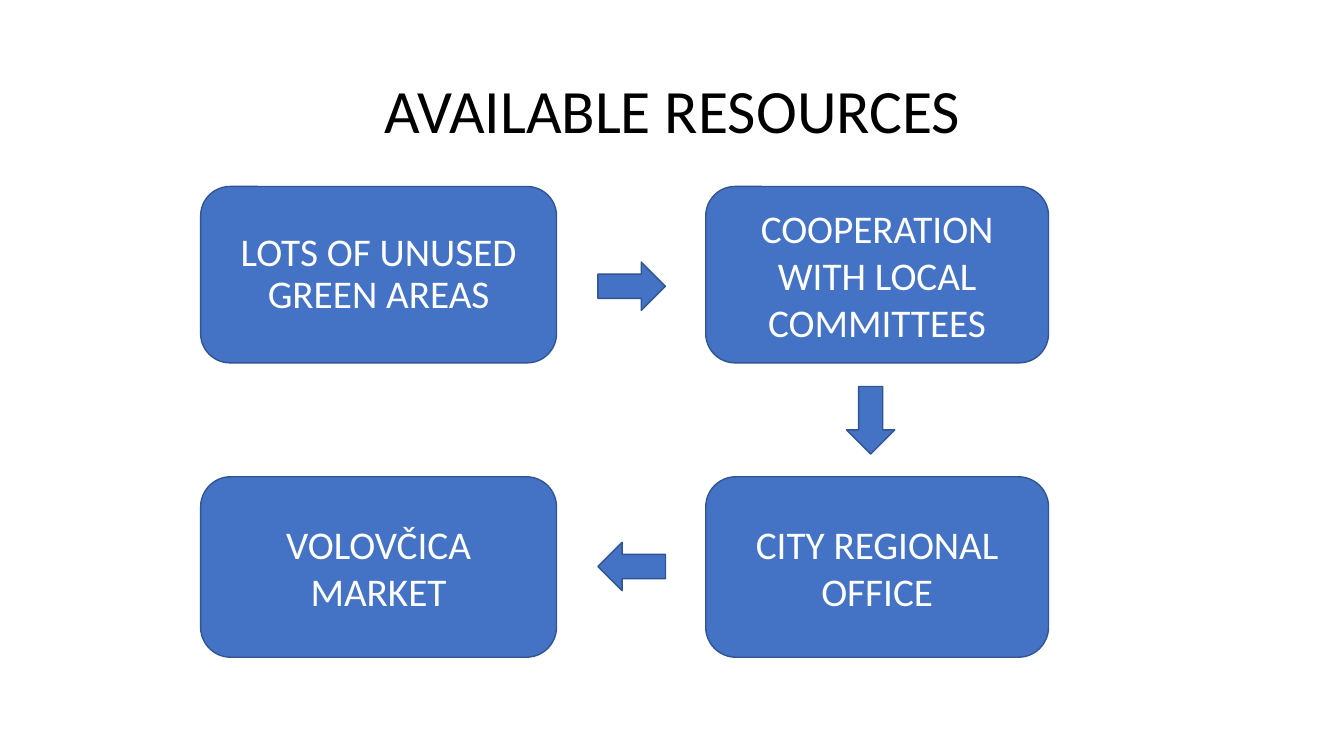
import pptx
import pptx.util
import pptx.dml.color
import pptx.enum.shapes
import pptx.enum.text

Inches = pptx.util.Inches
Pt = pptx.util.Pt
SHAPES = pptx.enum.shapes.MSO_SHAPE


def color(hex_string):
    return pptx.dml.color.RGBColor.from_string(hex_string)


def write(shape, text, size, text_color, line_spacing):
    frame = shape.text_frame
    frame.word_wrap = True
    frame.vertical_anchor = pptx.enum.text.MSO_ANCHOR.MIDDLE
    paragraph = frame.paragraphs[0]
    paragraph.text = text
    paragraph.alignment = pptx.enum.text.PP_ALIGN.CENTER
    paragraph.line_spacing = line_spacing
    paragraph.font.name = "Calibri"
    paragraph.font.size = Pt(size)
    paragraph.font.color.rgb = color(text_color)


presentation = pptx.Presentation()
presentation.slide_width = Inches(13.33)
presentation.slide_height = Inches(7.5)
slide = presentation.slides.add_slide(presentation.slide_layouts[6])

# Title
title = slide.shapes.add_textbox(Inches(0.92), Inches(0.4), Inches(11.5), Inches(1.45))
write(title, "AVAILABLE RESOURCES", 44, "000000", 0.9)

# Grid of boxes: (start, extent) of each column and row
columns = [(1.99, 3.53), (7, 3.4)]
rows = [(1.85, 1.75), (4.73, 1.79)]
resources = [
    ("LOTS OF UNUSED GREEN AREAS", 0, 0, 0.9),
    ("COOPERATION WITH LOCAL COMMITTEES", 1, 0, 1),
    ("VOLOVČICA MARKET", 0, 1, 1),
    ("CITY REGIONAL OFFICE", 1, 1, 1),
]
flow_shapes = []
for text, column, row, line_spacing in resources:
    left, width = columns[column]
    top, height = rows[row]
    box = slide.shapes.add_shape(SHAPES.ROUNDED_RECTANGLE, Inches(left), Inches(top),
                                 Inches(width), Inches(height))
    write(box, text, 28, "FFFFFF", line_spacing)
    flow_shapes.append(box)

# Arrows between the boxes: left, top, rotation
arrow_width, arrow_height = 0.67, 0.48
for left, top, rotation in [(5.93, 2.6, 0), (8.3, 3.93, 90), (5.93, 5.38, 180)]:
    arrow = slide.shapes.add_shape(SHAPES.RIGHT_ARROW, Inches(left), Inches(top),
                                   Inches(arrow_width), Inches(arrow_height))
    arrow.rotation = rotation
    flow_shapes.append(arrow)

# Common look of boxes and arrows
for shape in flow_shapes:
    shape.shadow.inherit = False
    shape.fill.solid()
    shape.fill.fore_color.rgb = color("4472C4")
    shape.line.color.rgb = color("325491")
    shape.line.width = Pt(1)

presentation.save("out.pptx")
